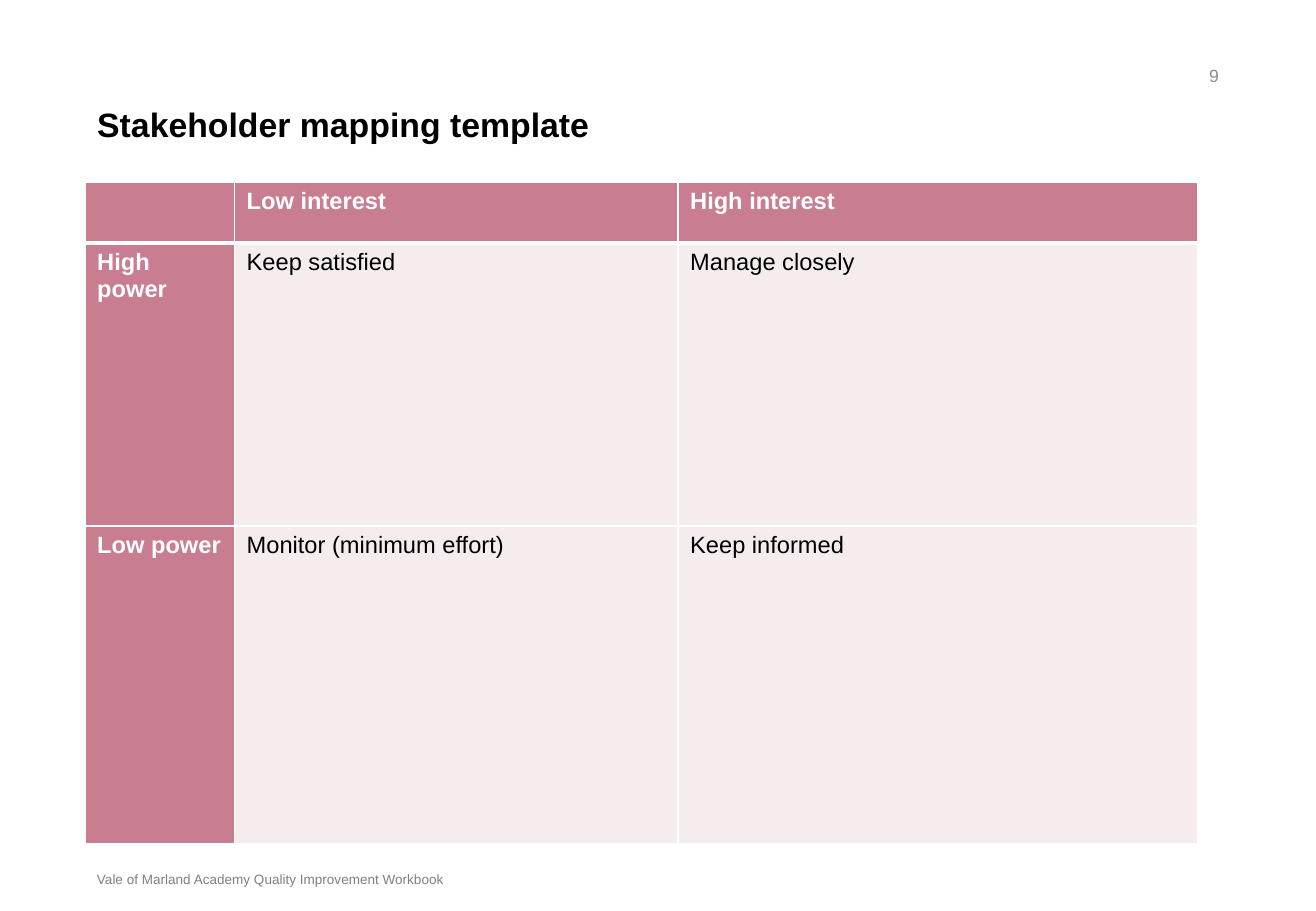
import pptx
import pptx.util
import pptx.dml.color
import pptx.enum.text
import lxml.etree
from pptx.oxml.ns import qn

Inches = pptx.util.Inches
Pt = pptx.util.Pt
ALIGN = pptx.enum.text.PP_ALIGN
ANCHOR = pptx.enum.text.MSO_ANCHOR

WHITE, BLACK, ROSE, BLUSH = "FFFFFF", "000000", "C97D91", "F5ECEE"

TITLE = "Stakeholder mapping template"
PAGE_NUMBER = "9"
FOOTER = "Vale of Marland Academy Quality Improvement Workbook"
MATRIX = [
    ["", "Low interest", "High interest"],
    ["High power", "Keep satisfied", "Manage closely"],
    ["Low power", "Monitor (minimum effort)", "Keep informed"],
]
COLUMN_WIDTHS = [1.23, 3.65, 4.28]
ROW_HEIGHTS = [0.5, 2.33, 2.62]
LEFT, TABLE_TOP = 0.7, 1.5

TITLE_FONT = {"size": Pt(20), "bold": True, "color": BLACK}
HEADING_FONT = {"size": Pt(14), "bold": True, "color": WHITE}
CELL_FONT = {"size": Pt(14), "bold": False, "color": BLACK}
NUMBER_FONT = {"size": Pt(10.5), "color": "8C8C8C"}
FOOTER_FONT = {"size": Pt(8), "color": "808080"}


def rgb(value):
    return pptx.dml.color.RGBColor.from_string(value)


def write(frame, text, font):
    para = frame.paragraphs[0]
    span = para.add_run()
    span.text = text
    for name, value in {"name": "Arial", **font}.items():
        if name == "color":
            span.font.color.rgb = rgb(value)
        else:
            setattr(span.font, name, value)
    return para


def place(shape, left, top, width, height):
    frame = {"left": left, "top": top, "width": width, "height": height}
    for name, value in frame.items():
        setattr(shape, name, Inches(value))


def add_label(page, text, area, font, anchor, align):
    box = page.shapes.add_textbox(*map(Inches, area))
    box.text_frame.word_wrap = True
    box.text_frame.vertical_anchor = anchor
    write(box.text_frame, text, font).alignment = align


def set_borders(cell, widths):
    properties = cell._tc.get_or_add_tcPr()
    for index, (side, width) in enumerate(widths.items()):
        line = lxml.etree.Element(qn(f"a:ln{side}"), w=str(Pt(width)))
        fill = lxml.etree.SubElement(line, qn("a:solidFill"))
        lxml.etree.SubElement(fill, qn("a:srgbClr"), val=WHITE)
        properties.insert(index, line)


def add_matrix(page):
    size = (sum(COLUMN_WIDTHS), sum(ROW_HEIGHTS))
    area = map(Inches, (LEFT, TABLE_TOP, *size))
    table = page.shapes.add_table(len(MATRIX), len(MATRIX[0]), *area).table
    table.first_col = True
    table.horz_banding = False
    for column, width in zip(table.columns, COLUMN_WIDTHS):
        column.width = Inches(width)
    for row, height in zip(table.rows, ROW_HEIGHTS):
        row.height = Inches(height)
    for r, texts in enumerate(MATRIX):
        for c, text in enumerate(texts):
            cell = table.cell(r, c)
            heading = r == 0 or c == 0
            cell.fill.solid()
            cell.fill.fore_color.rgb = rgb(ROSE if heading else BLUSH)
            set_borders(cell, {"L": 1, "R": 1, "T": 3 if r == 1 else 1, "B": 3 if r == 0 else 1})
            if text:
                write(cell.text_frame, text, HEADING_FONT if heading else CELL_FONT)


def main():
    deck = pptx.Presentation()
    deck.slide_width = Inches(10.83)
    deck.slide_height = Inches(7.5)
    page = deck.slides.add_slide(deck.slide_layouts[5])

    title = page.shapes.title
    place(title, LEFT, 0.84, 9.43, 0.77)
    title.text_frame.vertical_anchor = ANCHOR.TOP
    para = write(title.text_frame, TITLE, TITLE_FONT)
    para.alignment = ALIGN.LEFT
    para.line_spacing = 0.9

    add_matrix(page)
    add_label(page, PAGE_NUMBER, (7.79, 0.42, 2.34, 0.4), NUMBER_FONT, ANCHOR.MIDDLE, ALIGN.RIGHT)
    add_label(page, FOOTER, (LEFT, 6.95, 6.73, 0.4), FOOTER_FONT, ANCHOR.BOTTOM, ALIGN.LEFT)
    deck.save("out.pptx")


if __name__ == "__main__":
    main()
